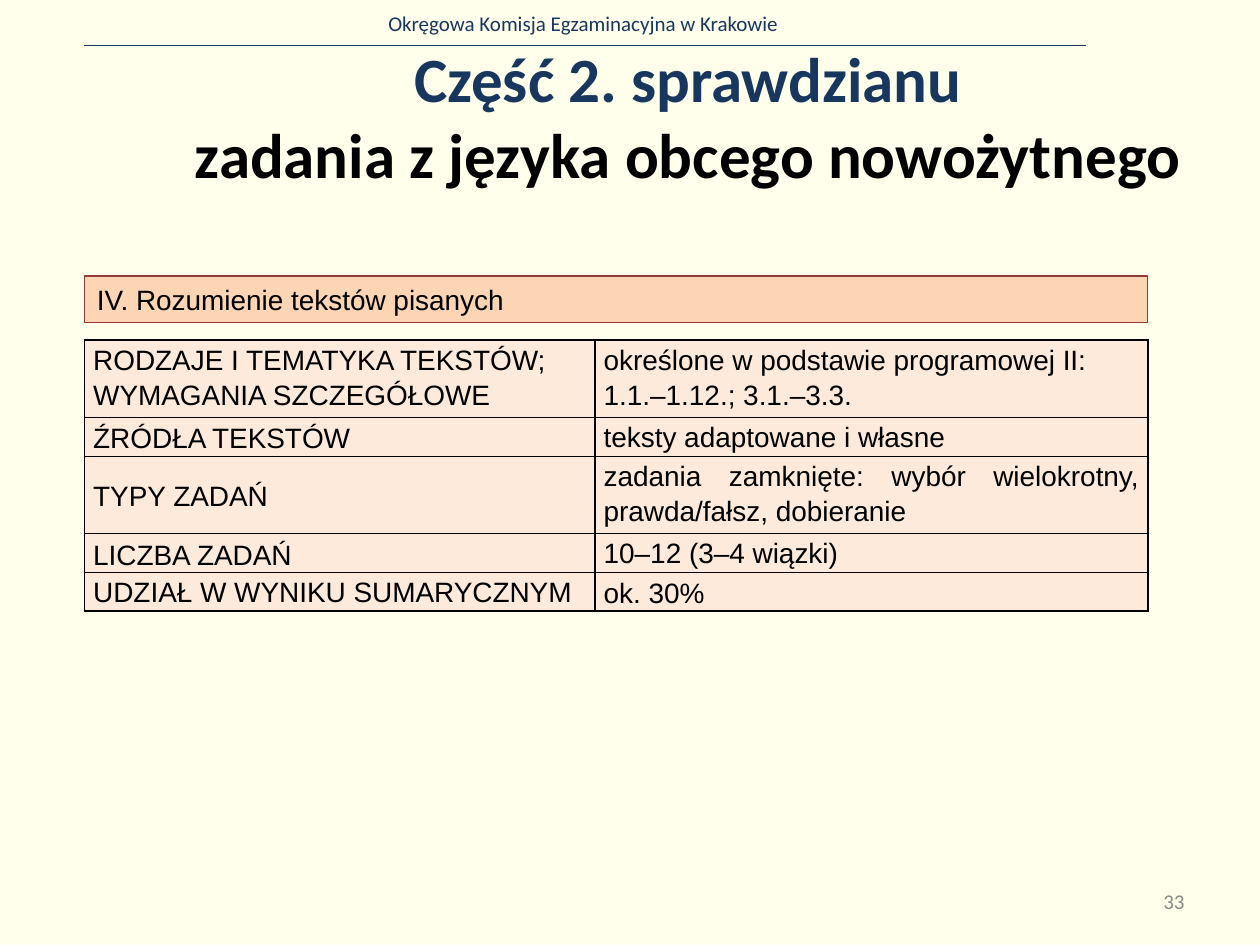
from collections import namedtuple
from dataclasses import dataclass

from lxml import etree
from pptx import Presentation, util as u
from pptx.dml.color import RGBColor
from pptx.enum import shapes, text
from pptx.oxml.ns import qn

Box = namedtuple("Box", "left top width height")
LEFT, CENTER = text.PP_ALIGN.LEFT, text.PP_ALIGN.CENTER
RIGHT, JUSTIFY = text.PP_ALIGN.RIGHT, text.PP_ALIGN.JUSTIFY
TOP, MIDDLE = text.MSO_ANCHOR.TOP, text.MSO_ANCHOR.MIDDLE


@dataclass(frozen=True)
class Theme:
    paper: str = "FFFFEB"
    navy: str = "17375E"
    ink: str = "000000"
    grey: str = "898989"
    band: str = "FCD5B5"
    band_edge: str = "953735"
    cell: str = "FDEADA"
    heading_font: str = "Calibri"
    body_font: str = "Arial"
    title_size: int = 36
    body_size: int = 16
    small_size: int = 12


THEME = Theme()

# Label, its anchor, value, its alignment and anchor, lines of text
ROWS = [
    ("RODZAJE I TEMATYKA TEKSTÓW; WYMAGANIA SZCZEGÓŁOWE", TOP,
     "określone w podstawie programowej II: 1.1.–1.12.; 3.1.–3.3.", LEFT, TOP, 2),
    ("ŹRÓDŁA TEKSTÓW", MIDDLE, "teksty adaptowane i własne", JUSTIFY, TOP, 1),
    ("TYPY ZADAŃ", MIDDLE,
     "zadania zamknięte: wybór wielokrotny, prawda/fałsz, dobieranie",
     JUSTIFY, TOP, 2),
    ("LICZBA ZADAŃ", MIDDLE, "10–12 (3–4 wiązki)", JUSTIFY, TOP, 1),
    ("UDZIAŁ W WYNIKU SUMARYCZNYM", TOP, "ok. 30%", JUSTIFY, MIDDLE, 1),
]


def inches(box):
    return [u.Inches(length) for length in box]


def color(value):
    return RGBColor.from_string(value)


def fill(target, value):
    target.fill.solid()
    target.fill.fore_color.rgb = color(value)


def style(para, font, size, ink, align=LEFT, bold=False):
    para.alignment = align
    para.font.name = font
    para.font.size = u.Pt(size)
    para.font.color.rgb = color(ink)
    para.font.bold = bold


def add_label(page, box, words, ink, align):
    frame = page.shapes.add_textbox(*inches(box)).text_frame
    frame.word_wrap = True
    frame.vertical_anchor = MIDDLE
    para = frame.paragraphs[0]
    para.text = words
    style(para, THEME.heading_font, THEME.small_size, ink, align)


def add_header(page, box, rule_left, rule_right):
    add_label(page, box, "Okręgowa Komisja Egzaminacyjna w Krakowie",
              THEME.navy, CENTER)
    y = u.Inches(box.top + box.height * 1.1)
    rule = page.shapes.add_connector(
        shapes.MSO_CONNECTOR.STRAIGHT, u.Inches(rule_left), y,
        u.Inches(rule_right), y)
    rule.line.color.rgb = color(THEME.navy)
    rule.line.width = u.Pt(0.5)
    etree.SubElement(rule._element.spPr, qn("a:effectLst"))


def add_title(page, box):
    title = page.shapes.title
    title.left, title.top, title.width, title.height = inches(box)
    frame = title.text_frame
    frame.word_wrap = True
    frame.auto_size = text.MSO_AUTO_SIZE.NONE
    frame.vertical_anchor = MIDDLE
    para = frame.paragraphs[0]
    style(para, THEME.heading_font, THEME.title_size, THEME.ink, CENTER, True)
    span = para.add_run()
    span.text = "Część 2. sprawdzianu"
    span.font.color.rgb = color(THEME.navy)
    para.add_line_break()
    para.add_run().text = "zadania z języka obcego nowożytnego"


def add_section_band(page, box):
    band = page.shapes.add_shape(shapes.MSO_SHAPE.RECTANGLE, *inches(box))
    band.shadow.inherit = False
    fill(band, THEME.band)
    band.line.color.rgb = color(THEME.band_edge)
    band.line.width = u.Pt(0.75)
    frame = band.text_frame
    frame.word_wrap = True
    frame.vertical_anchor = TOP
    para = frame.paragraphs[0]
    para.text = "IV. Rozumienie tekstów pisanych"
    style(para, THEME.body_font, THEME.body_size, THEME.ink)


def add_borders(cell):
    properties = cell._tc.get_or_add_tcPr()
    for place, side in enumerate(("lnL", "lnR", "lnT", "lnB")):
        edge = etree.Element(qn(f"a:{side}"), w=str(u.Pt(1)))
        solid = etree.SubElement(edge, qn("a:solidFill"))
        etree.SubElement(solid, qn("a:srgbClr"), val=THEME.ink)
        properties.insert(place, edge)


def fill_cell(cell, words, align, anchor):
    cell.margin_left = cell.margin_right = u.Inches(0.07)
    cell.margin_top = cell.margin_bottom = 0
    cell.vertical_anchor = anchor
    fill(cell, THEME.cell)
    add_borders(cell)
    para = cell.text_frame.paragraphs[0]
    para.text = words
    para.line_spacing = 1.15
    style(para, THEME.body_font, THEME.body_size, THEME.ink, align)


def add_task_table(page, box, label_share):
    table = page.shapes.add_table(len(ROWS), 2, *inches(box)).table
    table.first_row = table.horz_banding = False
    for column, share in zip(table.columns, (label_share, 1 - label_share)):
        column.width = u.Inches(box.width * share)
    line_height = box.height / sum(row[-1] for row in ROWS)
    for index, (label, label_anchor, value, align, anchor, lines) in enumerate(ROWS):
        table.rows[index].height = u.Inches(line_height * lines)
        fill_cell(table.cell(index, 0), label, LEFT, label_anchor)
        fill_cell(table.cell(index, 1), value, align, anchor)


def main():
    deck = Presentation()
    deck.slide_width, deck.slide_height = u.Inches(10), u.Inches(7.5)
    page = deck.slides.add_slide(deck.slide_layouts[5])
    fill(page.background, THEME.paper)

    left, width = 0.67, 8.44  # shared by the band and the table
    add_header(page, Box(0.26, 0.03, 8.74, 0.3), left, 8.62)
    add_title(page, Box(1.36, 0.29, 8.2, 1.25))
    add_label(page, Box(7.17, 6.95, 2.33, 0.4), "33", THEME.grey, RIGHT)
    add_section_band(page, Box(left, 2.19, width, 0.37))
    add_task_table(page, Box(left, 2.7, width, 2.15), 0.48)
    deck.save("out.pptx")


if __name__ == "__main__":
    main()
